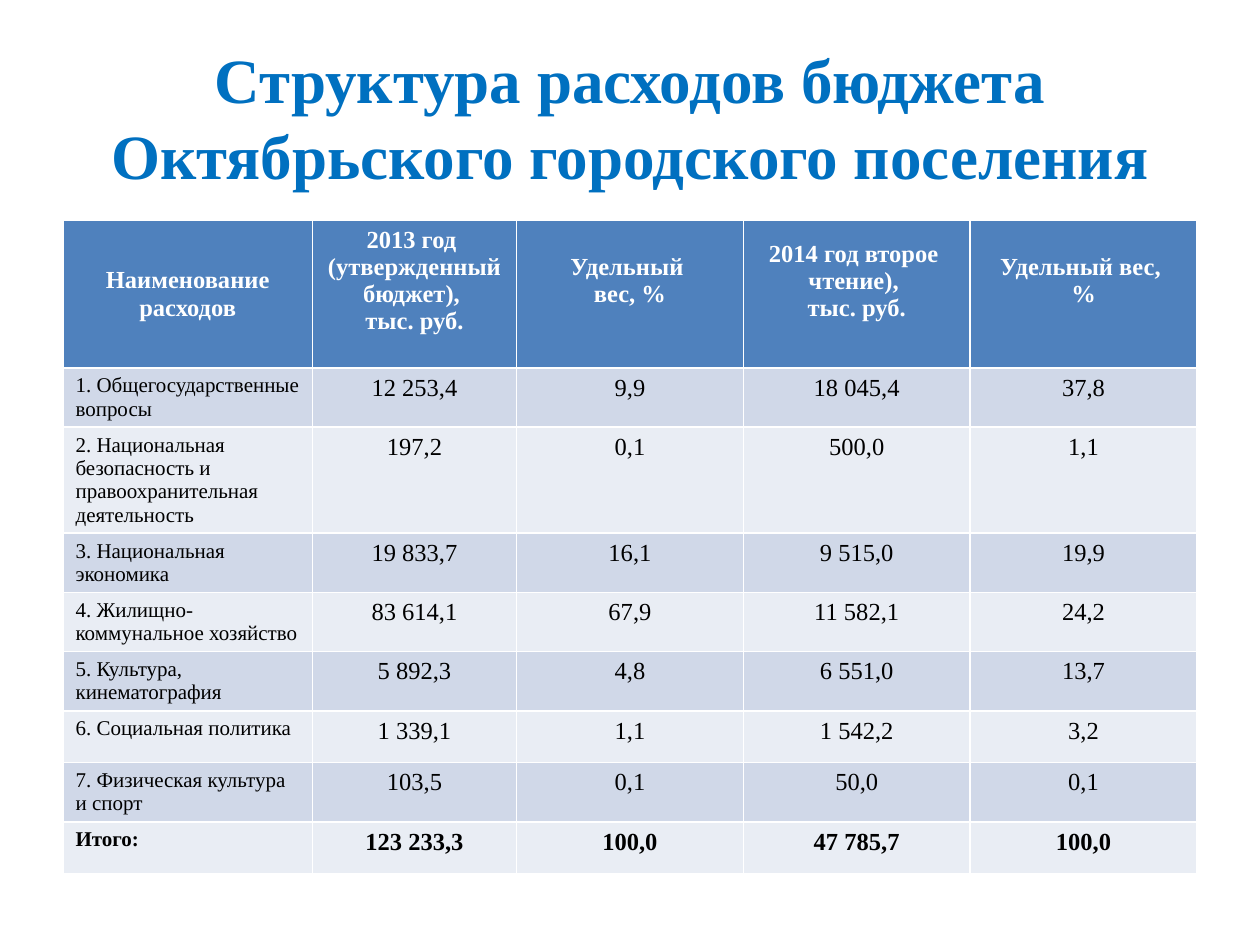
from pptx import Presentation
from pptx.dml.color import RGBColor
from pptx.enum.text import MSO_ANCHOR, PP_ALIGN
from pptx.util import Inches, Pt

CENTER, LEFT = PP_ALIGN.CENTER, PP_ALIGN.LEFT
MIDDLE, TOP = MSO_ANCHOR.MIDDLE, MSO_ANCHOR.TOP

TITLE_BLUE = RGBColor(0x00, 0x70, 0xC0)
HEADER_BLUE = RGBColor(0x4F, 0x81, 0xBD)
BANDS = (RGBColor(0xD0, 0xD8, 0xE8), RGBColor(0xE9, 0xED, 0xF4))
WHITE = RGBColor(0xFF, 0xFF, 0xFF)
BLACK = RGBColor(0x00, 0x00, 0x00)

FONT = "Times New Roman"
TITLE = "Структура расходов бюджета Октябрьского городского поселения"
COLUMN_WIDTHS = (1.98, 1.62, 1.8, 1.8, 1.8)
ROW_HEIGHT = 0.41
HEADER_BOTTOM_MARGIN = 0.26

HEADERS = (
    "Наименование расходов",
    "2013 год \n(утвержденный \nбюджет), \nтыс. руб.",
    "Удельный \nвес, %",
    "2014 год второе \nчтение), \nтыс. руб.",
    "Удельный вес, \n%",
)
EXPENSES = (
    ("1. Общегосударственные вопросы", "12 253,4", "9,9", "18 045,4", "37,8"),
    ("2. Национальная безопасность и правоохранительная\nдеятельность",
     "197,2", "0,1", "500,0", "1,1"),
    ("3. Национальная экономика", "19 833,7", "16,1", "9 515,0", "19,9"),
    ("4. Жилищно-\nкоммунальное хозяйство", "83 614,1", "67,9", "11 582,1", "24,2"),
    ("5. Культура, кинематография", "5 892,3", "4,8", "6 551,0", "13,7"),
    ("6. Социальная политика", "1 339,1", "1,1", "1 542,2", "3,2"),
    ("7. Физическая культура и спорт", "103,5", "0,1", "50,0", "0,1"),
    ("Итого:", "123 233,3", "100,0", "47 785,7", "100,0"),
)


def write_text(tf, text, align, size, color, bold):
    """Fill a text frame, one paragraph for each line of text."""
    tf.text = text
    font_format = {"name": FONT, "size": Pt(size), "bold": bold}
    for p in tf.paragraphs:
        p.alignment = align
        for r in p.runs:
            for name, value in font_format.items():
                setattr(r.font, name, value)
            r.font.color.rgb = color


def fill_cell(cell, text, fill, anchor, **text_format):
    cell.fill.solid()
    cell.fill.fore_color.rgb = fill
    cell.vertical_anchor = anchor
    write_text(cell.text_frame, text, **text_format)


def add_title(slide):
    title = slide.shapes.title
    title.left, title.top = Inches(0.5), Inches(0.3)
    title.width, title.height = Inches(9), Inches(1.25)
    title.text_frame.vertical_anchor = MIDDLE
    write_text(title.text_frame, TITLE, CENTER, 36, TITLE_BLUE, True)


def add_expense_table(slide):
    frame = slide.shapes.add_table(
        len(EXPENSES) + 1, len(HEADERS),
        Inches(0.5), Inches(1.75), Inches(9), Inches(5.48))
    table = frame.table
    for column, width in zip(table.columns, COLUMN_WIDTHS):
        column.width = Inches(width)
    for row in table.rows:
        row.height = Inches(ROW_HEIGHT)

    for col, text in enumerate(HEADERS):
        cell = table.cell(0, col)
        fill_cell(cell, text, HEADER_BLUE, MIDDLE,
                  align=CENTER, size=14, color=WHITE, bold=True)
        if col > 0:
            cell.margin_bottom = Inches(HEADER_BOTTOM_MARGIN)

    for row, values in enumerate(EXPENSES, start=1):
        is_total = row == len(EXPENSES)
        for col, text in enumerate(values):
            align, size = (LEFT, 12) if col == 0 else (CENTER, 14)
            fill_cell(table.cell(row, col), text, BANDS[(row - 1) % 2], TOP,
                      align=align, size=size, color=BLACK, bold=is_total)


def main():
    prs = Presentation()
    prs.slide_width, prs.slide_height = Inches(10), Inches(7.5)
    title_only = prs.slide_layouts[5]
    slide = prs.slides.add_slide(title_only)
    add_title(slide)
    add_expense_table(slide)
    prs.save("out.pptx")


if __name__ == "__main__":
    main()
